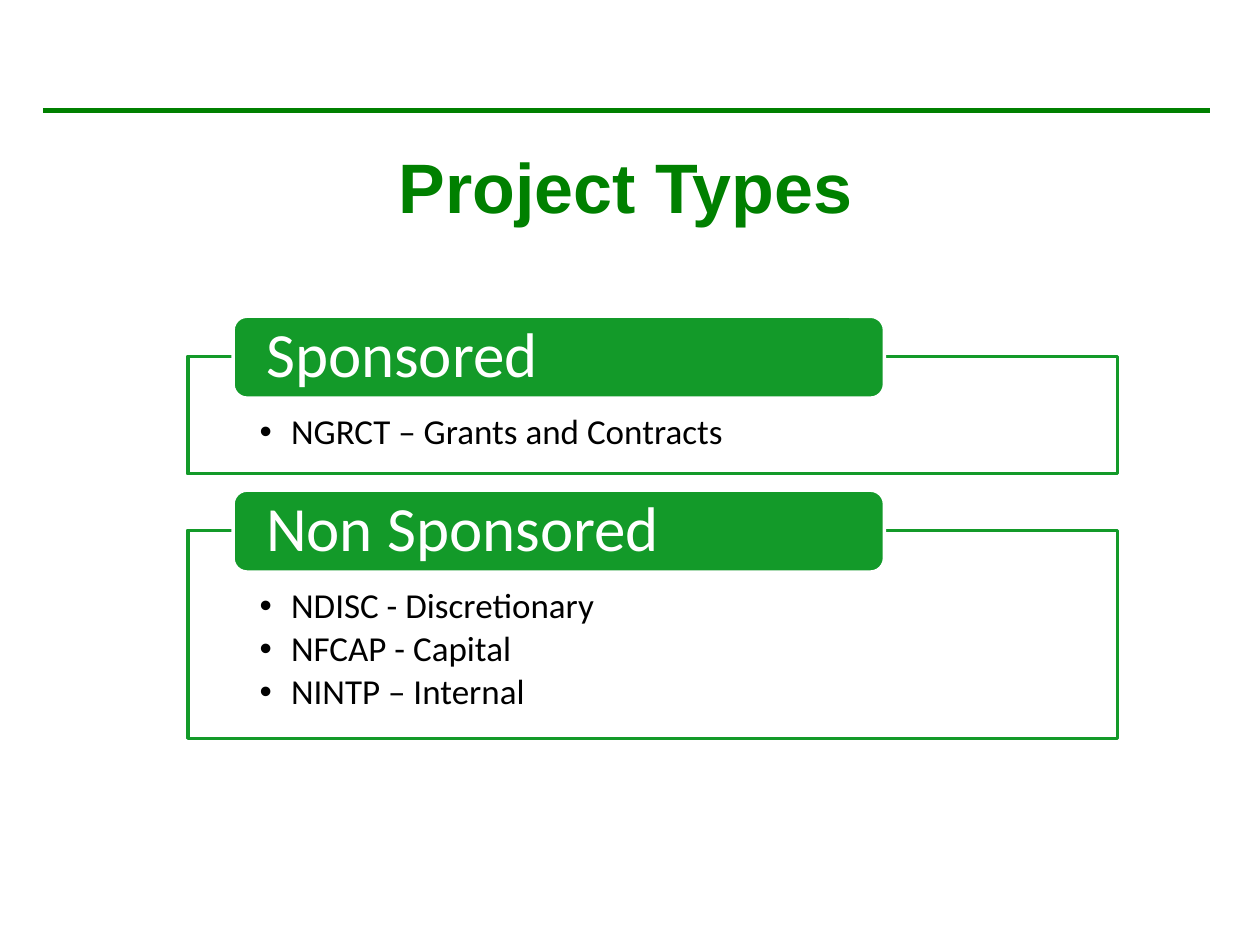
from lxml import etree
from pptx import Presentation
from pptx.dml.color import RGBColor
from pptx.enum.shapes import MSO_CONNECTOR, MSO_SHAPE
from pptx.enum.text import MSO_ANCHOR, PP_ALIGN
from pptx.oxml.ns import qn
from pptx.util import Inches, Pt

RECT, ROUNDED = MSO_SHAPE.RECTANGLE, MSO_SHAPE.ROUNDED_RECTANGLE
TOP, MIDDLE = MSO_ANCHOR.TOP, MSO_ANCHOR.MIDDLE
LEFT, CENTER = PP_ALIGN.LEFT, PP_ALIGN.CENTER
DARK_GREEN = RGBColor(0x00, 0x80, 0x00)
GREEN = RGBColor(0x13, 0x9A, 0x29)
WHITE = RGBColor(0xFF, 0xFF, 0xFF)
BLACK = RGBColor(0x00, 0x00, 0x00)

TITLE = "Project Types"
GROUPS = [
    ("Sponsored", 0.93, ["NGRCT – Grants and Contracts"]),
    ("Non Sponsored", 1.65, ["NDISC - Discretionary", "NFCAP - Capital", "NINTP – Internal"]),
]
BODY_X, BODY_W, BODY_TOP = 1.49, 7.38, 2.83
HEAD_X, HEAD_W, HEAD_H, HEAD_RISE = 1.85, 5.17, 0.65, 0.32
GAP = 0.45


def add_run(p, text, size, font, color, bold=False):
    r = p.add_run()
    r.text = text
    r.font.size, r.font.name, r.font.bold = Pt(size), font, bold
    r.font.color.rgb = color


def add_box(s, kind, x, y, w, h, fill, line, anchor, insets):
    sp = s.shapes.add_shape(kind, Inches(x), Inches(y), Inches(w), Inches(h))
    sp.shadow.inherit = False
    sp.fill.solid()
    sp.fill.fore_color.rgb = fill
    sp.line.color.rgb = line
    sp.line.width = Pt(2)
    tf = sp.text_frame
    tf.word_wrap = True
    tf.vertical_anchor = anchor
    tf.margin_left = tf.margin_right = Inches(insets[0])
    tf.margin_top, tf.margin_bottom = Inches(insets[1]), Inches(insets[2])
    return sp


def add_bullet(p):
    pPr = p._p.get_or_add_pPr()
    pPr.set("marL", str(Inches(0.25)))
    pPr.set("indent", str(Inches(-0.25)))
    etree.SubElement(pPr, qn("a:buFont")).set("typeface", "Arial")
    etree.SubElement(pPr, qn("a:buChar")).set("char", "•")


def add_group(s, y, heading, height, items):
    body = add_box(s, RECT, BODY_X, y, BODY_W, height, WHITE, GREEN, TOP, (0.57, 0.46, 0.16))
    color = body._element.spPr.find(qn("a:solidFill"))[0]
    etree.SubElement(color, qn("a:alpha")).set("val", "90000")
    tf = body.text_frame
    for i, item in enumerate(items):
        p = tf.paragraphs[0] if i == 0 else tf.add_paragraph()
        add_bullet(p)
        p.level = 1
        p.alignment = LEFT
        p.line_spacing = 0.9
        p.space_after = Pt(3)
        add_run(p, item, 20, "Calibri", BLACK)

    head = add_box(s, ROUNDED, HEAD_X, y - HEAD_RISE, HEAD_W, HEAD_H,
                   GREEN, WHITE, MIDDLE, (0.23, 0.03, 0.03))
    head.adjustments[0] = 0.17
    p = head.text_frame.paragraphs[0]
    p.alignment = LEFT
    p.line_spacing = 0.9
    add_run(p, heading, 36, "Calibri", WHITE)


prs = Presentation()
prs.slide_width, prs.slide_height = Inches(10), Inches(7.5)
s = prs.slides.add_slide(prs.slide_layouts[6])

title = s.shapes.add_textbox(Inches(0.49), Inches(1.09), Inches(8.95), Inches(0.77))
title.text_frame.word_wrap = True
p = title.text_frame.paragraphs[0]
p.alignment = CENTER
add_run(p, TITLE, 40, "Arial", DARK_GREEN, True)

rule = s.shapes.add_connector(MSO_CONNECTOR.STRAIGHT, Inches(0.34), Inches(0.88),
                              Inches(9.6), Inches(0.88))
rule.line.color.rgb = DARK_GREEN
rule.line.width = Pt(3)
etree.SubElement(rule._element.spPr, qn("a:effectLst"))

y = BODY_TOP
for heading, height, items in GROUPS:
    add_group(s, y, heading, height, items)
    y += height + GAP

prs.save("out.pptx")
